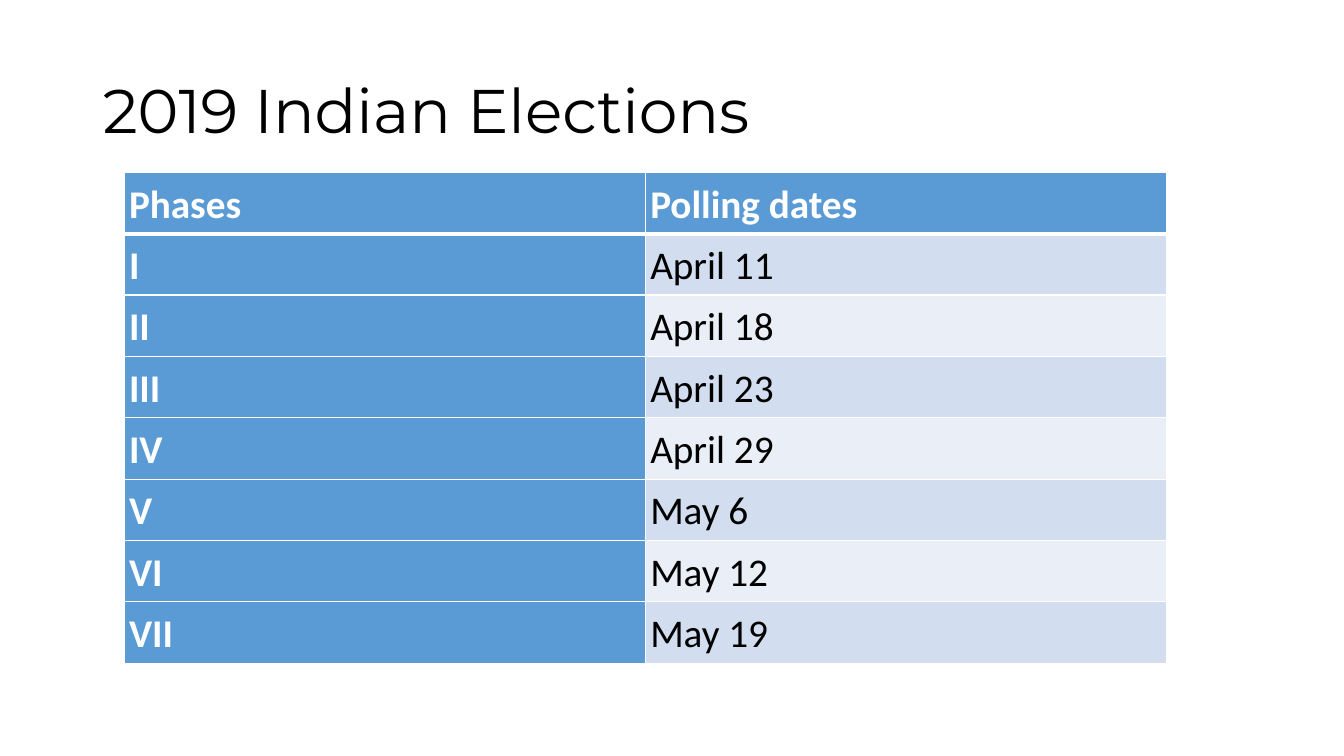
from lxml import etree
from pptx import Presentation
from pptx.dml.color import RGBColor
from pptx.enum.text import MSO_ANCHOR, PP_ALIGN
from pptx.oxml.ns import qn
from pptx.util import Inches, Pt

ROWS = [
    ("Phases", "Polling dates"),
    ("I", "April 11"),
    ("II", "April 18"),
    ("III", "April 23"),
    ("IV", "April 29"),
    ("V", "May 6"),
    ("VI", "May 12"),
    ("VII", "May 19"),
]
BLUE, BAND_DARK, BAND_LIGHT = "5B9BD5", "D2DEEF", "EAEFF7"
WHITE, BLACK = "FFFFFF", "000000"


def add_text(p, text, font, size, color, bold=False):
    r = p.add_run()
    r.text = text
    r.font.name = font
    r.font.size = Pt(size)
    r.font.bold = bold
    r.font.color.rgb = RGBColor.from_string(color)


def set_borders(cell, widths):
    """Draw white borders; widths maps L, R, T, B (in this order) to points."""
    tcPr = cell._tc.get_or_add_tcPr()
    for i, (side, width) in enumerate(widths.items()):
        ln = etree.Element(qn(f"a:ln{side}"), w=str(Pt(width)))
        fill = etree.SubElement(ln, qn("a:solidFill"))
        etree.SubElement(fill, qn("a:srgbClr"), val=WHITE)
        tcPr.insert(i, ln)


prs = Presentation()
prs.slide_width, prs.slide_height = Inches(13.33), Inches(7.5)
s = prs.slides.add_slide(prs.slide_layouts[5])

title = s.shapes.title
title.left, title.top = Inches(0.92), Inches(0.4)
title.width, title.height = Inches(11.5), Inches(1.45)
tf = title.text_frame
tf.vertical_anchor = MSO_ANCHOR.MIDDLE
p = tf.paragraphs[0]
p.alignment = PP_ALIGN.LEFT
p.line_spacing = 0.9
add_text(p, "2019 Indian Elections", "Montserrat", 44, BLACK)

table = s.shapes.add_table(
    len(ROWS), 2, Inches(1.23), Inches(1.71), Inches(10.34), Inches(4.86)
).table
table.first_col = True

for row, texts in enumerate(ROWS):
    for col, text in enumerate(texts):
        cell = table.cell(row, col)
        heading = row == 0 or col == 0
        band = BAND_DARK if row % 2 else BAND_LIGHT
        cell.fill.solid()
        cell.fill.fore_color.rgb = RGBColor.from_string(BLUE if heading else band)
        cell.vertical_anchor = MSO_ANCHOR.MIDDLE
        cell.margin_left = cell.margin_right = Inches(0.05)
        cell.margin_top = cell.margin_bottom = Inches(0.05)
        p = cell.text_frame.paragraphs[0]
        p.line_spacing = 1.07
        add_text(p, text, "Calibri", 28, WHITE if heading else BLACK, heading)
        top, bottom = 3 if row == 1 else 1, 3 if row == 0 else 1
        set_borders(cell, {"L": 1, "R": 1, "T": top, "B": bottom})

prs.save("out.pptx")
